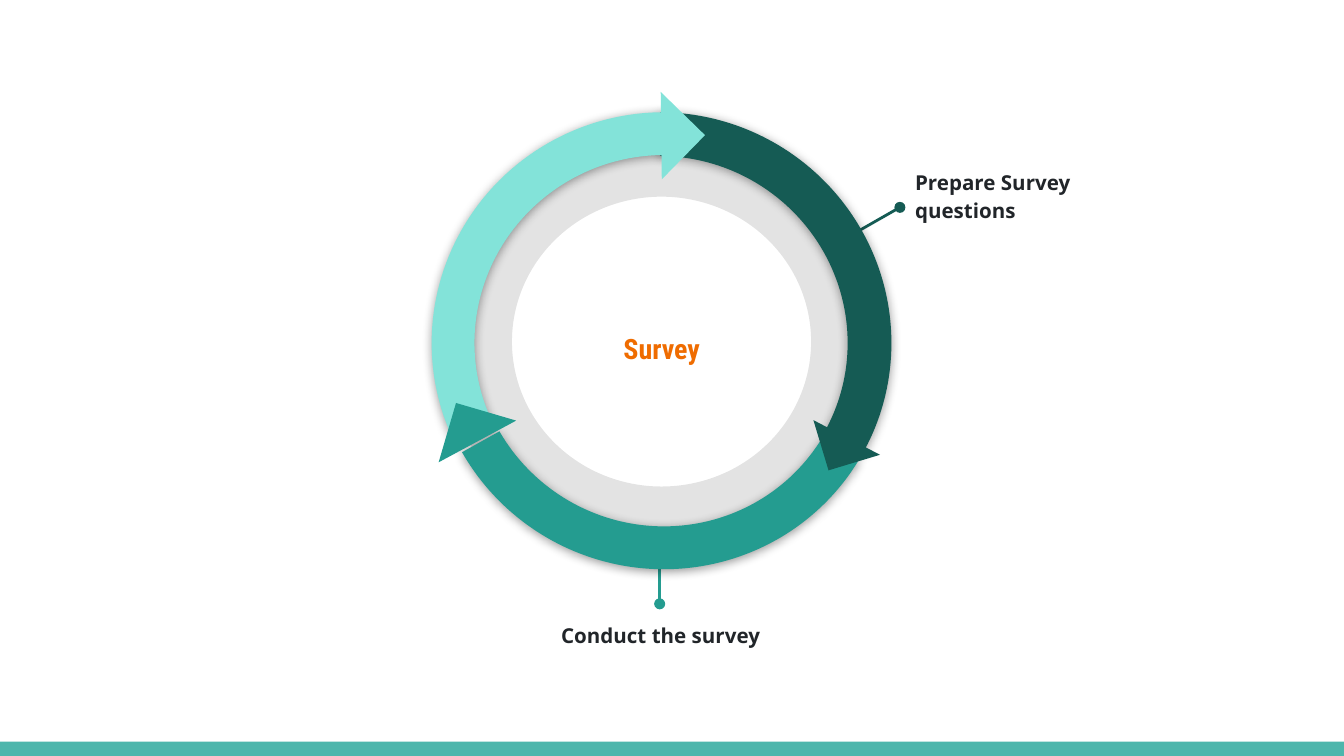
from lxml.etree import SubElement
from pptx import Presentation
from pptx.dml.color import RGBColor
from pptx.enum.shapes import MSO_CONNECTOR, MSO_SHAPE as SHAPE
from pptx.enum.text import MSO_ANCHOR as ANCHOR, PP_ALIGN as ALIGN
from pptx.oxml.ns import qn
from pptx.util import Pt

COLORS = {
    "bar": "4DB6AC",
    "ring": "000000",
    "dark": "155B54",
    "light": "83E3D9",
    "mid": "249C90",
    "label": "212529",
    "center": "EF6C00",
}

deck = Presentation()
deck.slide_width, deck.slide_height = Pt(720), Pt(405)
page = deck.slides.add_slide(deck.slide_layouts[6])


def add_filled(kind, frame, color, rotation=0):
    """Add a preset shape with a plain fill, no outline and no shadow."""
    shape = page.shapes.add_shape(kind, *map(Pt, frame))
    shape.fill.solid()
    shape.fill.fore_color.rgb = RGBColor.from_string(COLORS[color])
    shape.line.fill.background()
    shape.shadow.inherit = False
    shape.rotation = rotation
    return shape


def add_label(text, frame, font, size, color, align, anchor):
    box = page.shapes.add_textbox(*map(Pt, frame))
    text_frame = box.text_frame
    text_frame.word_wrap = True
    text_frame.vertical_anchor = anchor
    text_frame.margin_left = text_frame.margin_right = Pt(7.2)
    text_frame.margin_top = text_frame.margin_bottom = Pt(7.2)
    text_frame.text = text
    para = text_frame.paragraphs[0]
    para.alignment = align
    para.line_spacing = 1.15
    span = para.runs[0]
    span.font.name = font
    span.font.size = Pt(size)
    span.font.bold = True
    span.font.color.rgb = RGBColor.from_string(COLORS[color])


# Footer bar and the pale ring behind the cycle
add_filled(SHAPE.RECTANGLE, (0, 397.4, 720, 7.6), "bar")
ring = add_filled(SHAPE.DONUT, (237.4, 68.5, 234, 229), "ring")
ring.adjustments[0] = 0.161
ring_color = ring.element.spPr.find(qn("a:solidFill"))[0]
SubElement(ring_color, qn("a:alpha"), val="11000")

# Callout lines, dotted at the label end
for start_x, start_y, end_x, end_y, color in (
    (482.1, 111.1, 441.8, 134.1, "dark"),
    (353.4, 323.5, 353.4, 282.4, "mid"),
):
    callout = page.shapes.add_connector(
        MSO_CONNECTOR.STRAIGHT, Pt(start_x), Pt(start_y), Pt(end_x), Pt(end_y))
    callout.line.color.rgb = RGBColor.from_string(COLORS[color])
    callout.line.width = Pt(1.5)
    properties = callout.element.spPr
    SubElement(properties.find(qn("a:ln")), qn("a:headEnd"), type="oval")
    SubElement(properties, qn("a:effectLst"))

add_label("Prepare Survey questions", (483.1, 82, 138.2, 60.5),
          "Open Sans", 11, "label", ALIGN.LEFT, ANCHOR.TOP)
add_label("Conduct the survey ", (203.8, 324.7, 303.1, 60.5),
          "Open Sans", 11, "label", ALIGN.CENTER, ANCHOR.TOP)
add_label("Survey", (287.9, 149, 133.2, 72.7),
          "Roboto Condensed", 15, "center", ALIGN.CENTER, ANCHOR.MIDDLE)

# Arcs and arrowheads, back to front; arc angles are in 1/0.6 degree units
ARC_FRAME = (230.9, 60.5, 247, 244.1)
ARC, HEAD = SHAPE.BLOCK_ARC, SHAPE.RIGHT_TRIANGLE
for kind, frame, color, rotation, flipped, adjustments in (
    (ARC, ARC_FRAME, "dark", 29.4, False, (144.14, 0.01, 0.096)),
    (ARC, ARC_FRAME, "light", 330.6, True, (143.49, 214.73, 0.094)),
    (HEAD, (337.7, 56.1, 33.1, 33.1), "light", 224.3, False, ()),
    (ARC, ARC_FRAME, "mid", 209.4, True, (143.16, 215.03, 0.094)),
    (HEAD, (439.2, 220.3, 28.8, 28.1), "dark", 343.2, False, ()),
    (HEAD, (239.2, 219.7, 33.1, 33.6), "mid", 106.3, False, ()),
):
    piece = add_filled(kind, frame, color, rotation)
    for index, value in enumerate(adjustments):
        piece.adjustments[index] = value
    properties = piece.element.spPr
    if flipped:
        properties.find(qn("a:xfrm")).set("flipH", "1")
    if kind == ARC:
        shadow = SubElement(
            properties.find(qn("a:effectLst")), qn("a:outerShdw"),
            blurRad=str(Pt(5.6)), dist=str(Pt(0.8)), dir="5400000",
            algn="ctr", rotWithShape="0")
        shadow_color = SubElement(shadow, qn("a:srgbClr"), val="000000")
        SubElement(shadow_color, qn("a:alpha"), val="40000")

deck.save("out.pptx")
